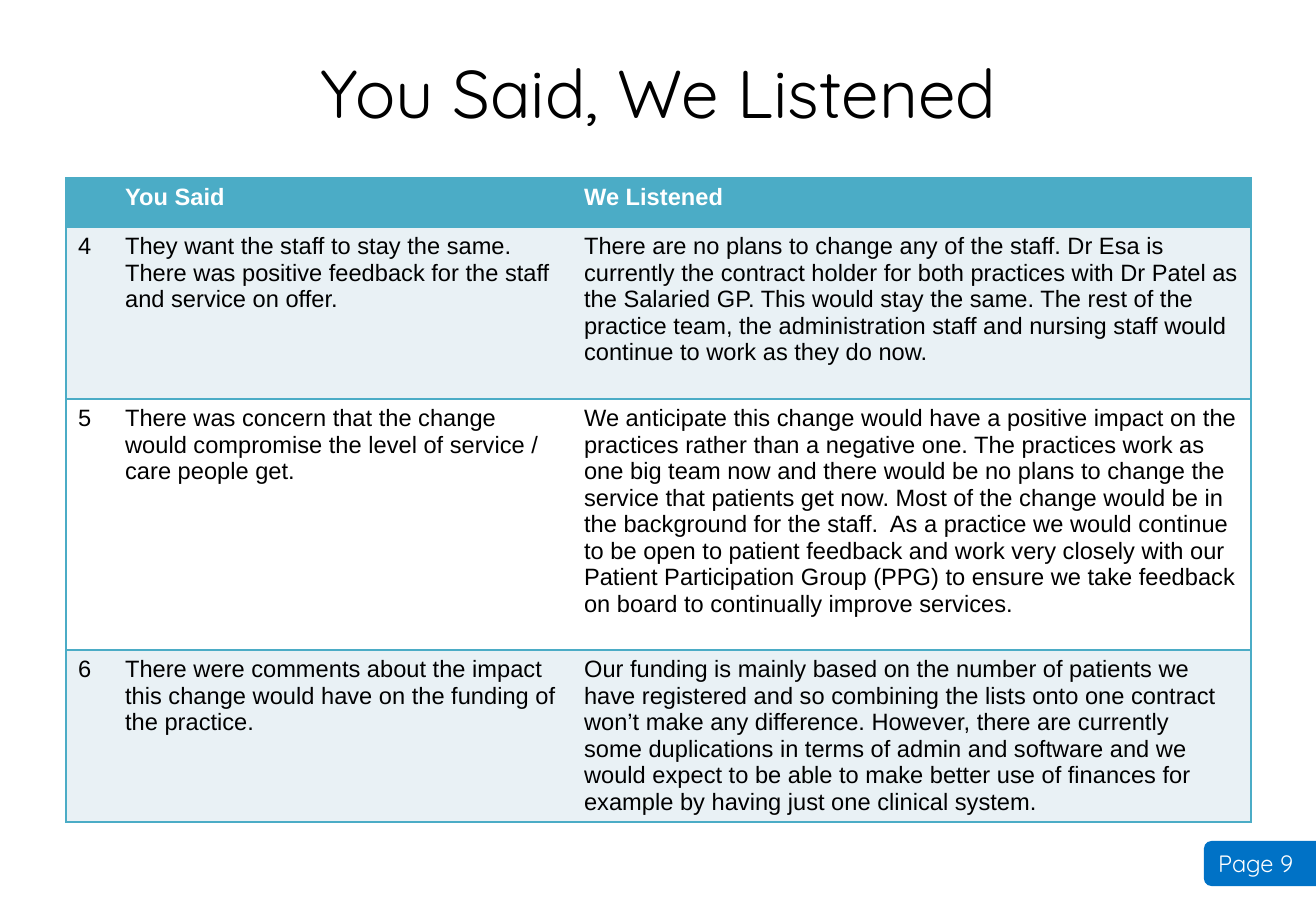
from lxml import etree
from pptx import Presentation, util as u
from pptx.dml.color import RGBColor
from pptx.enum import shapes, text
from pptx.oxml.ns import qn

PX = 7526  # EMU in one px
HUES = {"teal": "4BACC6", "pale": "E9F1F5", "white": "FFFFFF",
        "black": "000000", "blue": "0072C6"}


def write(frame, words, size=14, font="Arial", hue="black", bold=False,
          align=text.PP_ALIGN.LEFT):
    frame.text = words
    for para in frame.paragraphs:
        para.alignment = align
        para.font.size = u.Pt(size)
        for run in para.runs:
            run.font.name = font
            run.font.size = u.Pt(size)
            run.font.bold = bold
            run.font.color.rgb = RGBColor.from_string(HUES[hue])


def edge(cell, tag, hue=None):
    props = cell._tc.get_or_add_tcPr()
    line = etree.SubElement(props, qn("a:" + tag), w=str(u.Pt(1)))
    if hue:
        fill = etree.SubElement(line, qn("a:solidFill"))
        etree.SubElement(fill, qn("a:srgbClr"), val=HUES[hue])
    else:
        etree.SubElement(line, qn("a:noFill"))


deck = Presentation()
deck.slide_width, deck.slide_height = 1316 * PX, 911 * PX
slide = deck.slides.add_slide(deck.slide_layouts[5])

# Title
title = slide.shapes.title
title.left, title.top, title.width, title.height = (
    n * PX for n in (66, 16, 1185, 152))
title.text_frame.vertical_anchor = text.MSO_ANCHOR.MIDDLE
write(title.text_frame, "You Said, We Listened", size=40, font="Quicksand",
      align=text.PP_ALIGN.CENTER)

# Table of comments and answers
rows = [
    ("", "You Said", "We Listened"),
    ("4",
     "They want the staff to stay the same. There was positive feedback for "
     "the staff and service on offer.",
     "There are no plans to change any of the staff. Dr Esa is currently the "
     "contract holder for both practices with Dr Patel as the Salaried GP. "
     "This would stay the same. The rest of the practice team, the "
     "administration staff and nursing staff would continue to work as they "
     "do now."),
    ("5",
     "There was concern that the change would compromise the level of "
     "service / care people get.",
     "We anticipate this change would have a positive impact on the practices "
     "rather than a negative one. The practices work as one big team now and "
     "there would be no plans to change the service that patients get now. "
     "Most of the change would be in the background for the staff.  As a "
     "practice we would continue to be open to patient feedback and work very "
     "closely with our Patient Participation Group (PPG) to ensure we take "
     "feedback on board to continually improve services."),
    ("6",
     "There were comments about the impact this change would have on the "
     "funding of the practice.",
     "Our funding is mainly based on the number of patients we have "
     "registered and so combining the lists onto one contract won’t make any "
     "difference. However, there are currently\n"
     "some duplications in terms of admin and software and we would expect to "
     "be able to make better use of finances for example by having just one "
     "clinical system."),
]
wide = (47, 459, 679)
high = (49, 172, 251, 172)
table = slide.shapes.add_table(
    len(rows), len(wide), 66 * PX, 178 * PX,
    sum(wide) * PX, sum(high) * PX).table
for col, width in zip(table.columns, wide):
    col.width = width * PX
for r, row in enumerate(rows):
    table.rows[r].height = high[r] * PX
    back = "teal" if r == 0 else "pale" if r % 2 else "white"
    for c, words in enumerate(row):
        cell = table.cell(r, c)
        write(cell.text_frame, words, hue="black" if r else "white",
              bold=r == 0)
        # Borders come before the fill in the cell properties
        edge(cell, "lnL", "teal" if c == 0 else None)
        edge(cell, "lnR", "teal" if c == len(wide) - 1 else None)
        edge(cell, "lnT", "teal")
        edge(cell, "lnB", "teal")
        cell.fill.solid()
        cell.fill.fore_color.rgb = RGBColor.from_string(HUES[back])

# Page tab, running over the right edge
tab = slide.shapes.add_shape(
    shapes.MSO_SHAPE.ROUNDED_RECTANGLE,
    *(n * PX for n in (1204, 841, 230, 45)))
tab.shadow.inherit = False
tab.fill.solid()
tab.fill.fore_color.rgb = RGBColor.from_string(HUES["blue"])
tab.line.fill.background()
tab.text_frame.vertical_anchor = text.MSO_ANCHOR.MIDDLE
write(tab.text_frame, "Page 9", font="Quicksand", hue="white")

deck.save("out.pptx")
